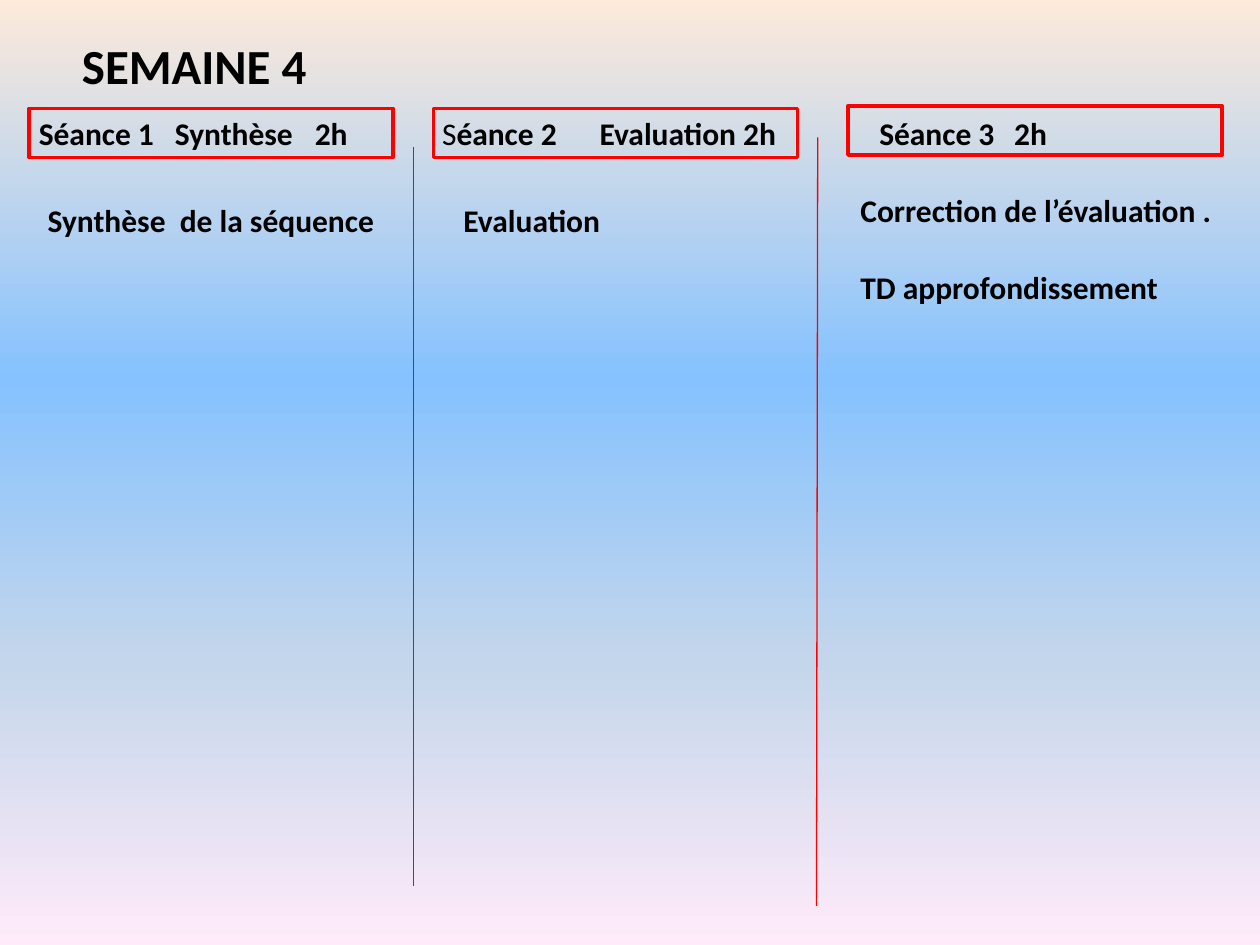
from lxml.etree import SubElement
from pptx import Presentation
from pptx.dml.color import RGBColor
from pptx.enum.shapes import MSO_CONNECTOR as Link, MSO_SHAPE as Shape
from pptx.enum.text import MSO_ANCHOR as Anchor, MSO_AUTO_SIZE as Fit, PP_ALIGN as Align
from pptx.oxml.ns import qn
from pptx.util import Inches, Pt

RED = RGBColor(0xFF, 0x00, 0x00)
BLACK = RGBColor(0x00, 0x00, 0x00)
SKY = [
    (0, RGBColor(0xFD, 0xEA, 0xDA)),
    (40, RGBColor(0x85, 0xC2, 0xFF)),
    (70, RGBColor(0xC4, 0xD6, 0xEB)),
    (100, RGBColor(0xFF, 0xEB, 0xFA)),
]
FONT = "Calibri"


def paint(slide):
    """Fill the background with the vertical gradient."""
    fill = slide.background.fill
    fill.gradient()
    fill.gradient_angle = 270
    stops = next(slide.element.iter(qn("a:gsLst")))
    for stop in list(stops):
        stops.remove(stop)
    for spot, tint in SKY:
        stop = SubElement(stops, qn("a:gs"), pos=str(spot * 1000))
        SubElement(stop, qn("a:srgbClr"), val=str(tint))


def style(para, size):
    """Set the common font of a paragraph."""
    font = para.font
    font.name, font.size, font.bold = FONT, Pt(size), True
    font.color.rgb = BLACK


def head(slide, text):
    """Place and format the slide title."""
    title = slide.shapes.title
    title.left, title.top = Inches(0.55), Inches(0.23)
    title.width, title.height = Inches(2.34), Inches(0.57)
    frame = title.text_frame
    frame.text = text
    frame.auto_size = Fit.NONE
    frame.vertical_anchor = Anchor.TOP
    para = frame.paragraphs[0]
    para.alignment = Align.LEFT
    style(para, 28)


def write(slide, box, lines, gap=0):
    """Add a text box with one paragraph per line and return its frame."""
    frame = slide.shapes.add_textbox(*map(Inches, box)).text_frame
    frame.word_wrap = True
    frame.text = "\n".join(lines)
    for para in frame.paragraphs:
        style(para, 18)
    for para in frame.paragraphs[1:]:
        para.space_before = Pt(gap)
    return frame


def label(slide, box, parts, tabs):
    """Add a session label whose parts are set apart by tab stops."""
    para = write(slide, box, ["\t".join(parts)]).paragraphs[0]
    props = para._p.get_or_add_pPr()
    stops = SubElement(props, qn("a:tabLst"))
    props.insert(0, stops)
    for tab in tabs:
        SubElement(stops, qn("a:tab"), pos=str(Inches(tab)), algn="l")
    return para


def thin(para):
    """Make the first letter of a paragraph regular."""
    text = "".join(run.text for run in para.runs[:1])
    first = para.runs[0]
    first.text = text[0]
    first.font.bold = False
    rest = para.add_run()
    rest.text = text[1:]
    first._r.addnext(rest._r)


def frame(slide, box):
    """Add a red outlined rectangle."""
    rect = slide.shapes.add_shape(Shape.RECTANGLE, *map(Inches, box))
    rect.shadow.inherit = False
    rect.fill.background()
    rect.line.color.rgb = RED
    rect.line.width = Pt(2)


def rule(slide, ends):
    """Add a thin red line between columns."""
    line = slide.shapes.add_connector(Link.STRAIGHT, *map(Inches, ends))
    line.line.color.rgb = RED
    line.line.width = Pt(0.75)
    SubElement(line._element.spPr, qn("a:effectLst"))


def main():
    """Build the weekly plan and save it."""
    deck = Presentation()
    deck.slide_width, deck.slide_height = Inches(10), Inches(7.5)
    slide = deck.slides.add_slide(deck.slide_layouts[5])
    paint(slide)
    head(slide, "SEMAINE 4")

    label(slide, (0.21, 0.86, 3, 0.4), ["Séance 1", "Synthèse", "2h"], [1.08, 2.19])
    frame(slide, (0.23, 0.86, 2.89, 0.39))
    second = label(slide, (3.41, 0.86, 2.92, 0.4), ["Séance 2", "Evaluation 2h"], [1.25])
    thin(second)
    frame(slide, (3.44, 0.86, 2.89, 0.39))
    label(slide, (6.88, 0.86, 2.81, 0.4), ["Séance 3", "2h"], [1.07])
    frame(slide, (6.73, 0.84, 2.97, 0.39))

    rule(slide, (3.28, 1.17, 3.28, 7.03))
    rule(slide, (6.49, 1.09, 6.48, 7.19))

    tasks = ["Correction de l’évaluation .", "TD approfondissement"]
    write(slide, (6.73, 1.47, 2.99, 4.04), tasks, 22)
    write(slide, (0.28, 1.55, 2.99, 0.4), ["Synthèse  de la séquence"])
    write(slide, (3.58, 1.55, 2.34, 0.4), ["Evaluation"])
    deck.save("out.pptx")


if __name__ == "__main__":
    main()
